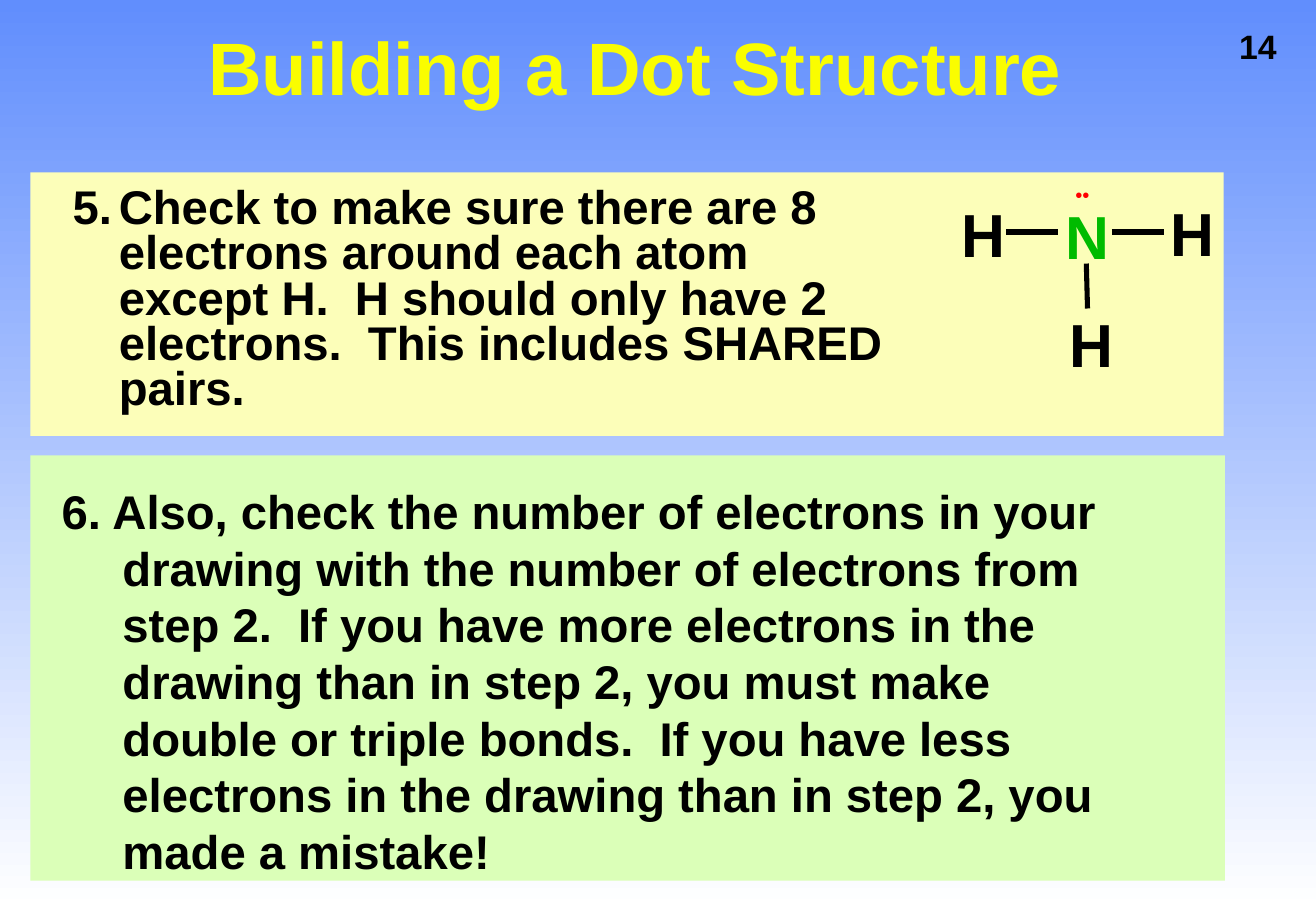
from dataclasses import dataclass

from pptx import Presentation
from pptx.dml.color import RGBColor
from pptx.enum.shapes import MSO_CONNECTOR as CONN, MSO_SHAPE as SHAPE
from pptx.enum.text import MSO_ANCHOR as ANCHOR, PP_ALIGN as ALIGN
from pptx.oxml.ns import qn
from pptx.util import Inches, Pt
from lxml.etree import SubElement


@dataclass(frozen=True)
class Theme:
    font: str = "Arial"
    sky: str = "618EFD"
    white: str = "FFFFFF"
    ink: str = "000000"
    title: str = "FAFD00"
    cream: str = "FCFEB9"
    mint: str = "DBFFB8"
    nitrogen: str = "00BB00"
    electron: str = "FF0000"
    title_size: int = 44
    atom_size: int = 36
    body_size: int = 28
    number_size: int = 20
    dot_size: int = 12
    bond_width: int = 3


T = Theme()

STEP_5 = ("Check to make sure there are 8 electrons around each atom except H.  "
          "H should only have 2 electrons.  This includes SHARED pairs.")
STEP_6 = ("6. Also, check the number of electrons in your drawing with the number of "
          "electrons from step 2.  If you have more electrons in the drawing than in "
          "step 2, you must make double or triple bonds.  If you have less electrons "
          "in the drawing than in step 2, you made a mistake!")


def rgb(code):
    return RGBColor.from_string(code)


def add_text(shapes, box, text, size, color=T.ink, bold=True, wrap=True, inset=True):
    """Add a one-paragraph text box and return its frame and paragraph."""
    tf = shapes.add_textbox(*map(Inches, box)).text_frame
    tf.word_wrap = wrap
    if not inset:
        tf.margin_left = tf.margin_top = tf.margin_right = tf.margin_bottom = 0
    p = tf.paragraphs[0]
    p.text = text
    font = p.runs[0].font
    font.name, font.size, font.bold = T.font, Pt(size), bold
    font.color.rgb = rgb(color)
    return tf, p


def hang(p, indent):
    """Give the paragraph a hanging indent and return its properties."""
    pPr = p._p.get_or_add_pPr()
    pPr.set("marL", str(Inches(indent)))
    pPr.set("indent", str(-Inches(indent)))
    return pPr


def add_panel(shapes, box, color):
    sp = shapes.add_shape(SHAPE.RECTANGLE, *map(Inches, box))
    sp.shadow.inherit = False
    sp.fill.solid()
    sp.fill.fore_color.rgb = rgb(color)
    sp.line.fill.background()


def paint_background(slide):
    fill = slide.background.fill
    fill.gradient()
    fill.gradient_angle = 270
    for stop, color, position in zip(fill.gradient_stops, (T.sky, T.white), (0, 1)):
        stop.color.rgb = rgb(color)
        stop.position = position


def add_header(slide, box):
    x, y, w, h = box
    add_text(slide.shapes, (x + 9.11, y - 0.01, 0.54, 0.43), "14", T.number_size, wrap=False)
    tf, p = add_text(slide.shapes, (x, y, w, h), "Building a Dot Structure",
                     T.title_size, T.title)
    tf.vertical_anchor = ANCHOR.MIDDLE
    p.alignment = ALIGN.CENTER
    p.line_spacing = 0.9


def add_ammonia(slide, x, y):
    """Draw the NH3 dot structure with its top left corner at x, y."""
    shapes = slide.shapes.add_group_shape().shapes
    # Atoms and lone pair
    for dx, dy, symbol, color in ((0, 0.12, "H", T.ink), (1.72, 0.11, "H", T.ink),
                                  (0.89, 1.03, "H", T.ink), (0.86, 0.14, "N", T.nitrogen)):
        add_text(shapes, (x + dx, y + dy, 0.36, 0.6), symbol, T.atom_size, color,
                 wrap=False, inset=False)
    add_text(shapes, (x + 0.94, y, 0.12, 0.2), "••", T.dot_size, T.electron,
             bold=False, wrap=False, inset=False)
    # Bonds
    for x1, y1, x2, y2 in ((0.37, 0.41, 0.8, 0.41), (1.24, 0.41, 1.67, 0.41),
                           (1.03, 0.67, 1.04, 1.04)):
        bond = shapes.add_connector(CONN.STRAIGHT, Inches(x + x1), Inches(y + y1),
                                    Inches(x + x2), Inches(y + y2))
        bond.line.color.rgb = rgb(T.ink)
        bond.line.width = Pt(T.bond_width)
        SubElement(bond._element.spPr, qn("a:effectLst"))


def add_step_5(slide, box):
    x, y, w, h = box
    add_panel(slide.shapes, box, T.cream)
    _, p = add_text(slide.shapes, (x + 0.25, y + 0.08, 7.08, h), STEP_5, T.body_size)
    p.line_spacing = 0.8
    p.space_before = Pt(0.3 * T.body_size)
    SubElement(hang(p, 0.38), qn("a:buAutoNum"), type="arabicPeriod", startAt="5")
    add_ammonia(slide, x + 7.66, y + 0.08)


def add_step_6(slide, box):
    x, y, w, h = box
    add_panel(slide.shapes, box, T.mint)
    _, p = add_text(slide.shapes, (x + 0.16, y + 0.17, 9.17, 3.84), STEP_6, T.body_size)
    hang(p, 0.5)


def main():
    prs = Presentation()
    prs.slide_width, prs.slide_height = Inches(10.83), Inches(7.5)
    slide = prs.slides.add_slide(prs.slide_layouts[6])
    paint_background(slide)
    add_header(slide, (0.99, 0.17, 8.48, 0.83))
    add_step_5(slide, (0.25, 1.42, 9.82, 2.17))
    add_step_6(slide, (0.25, 3.75, 9.83, 3.5))
    prs.save("out.pptx")


if __name__ == "__main__":
    main()
